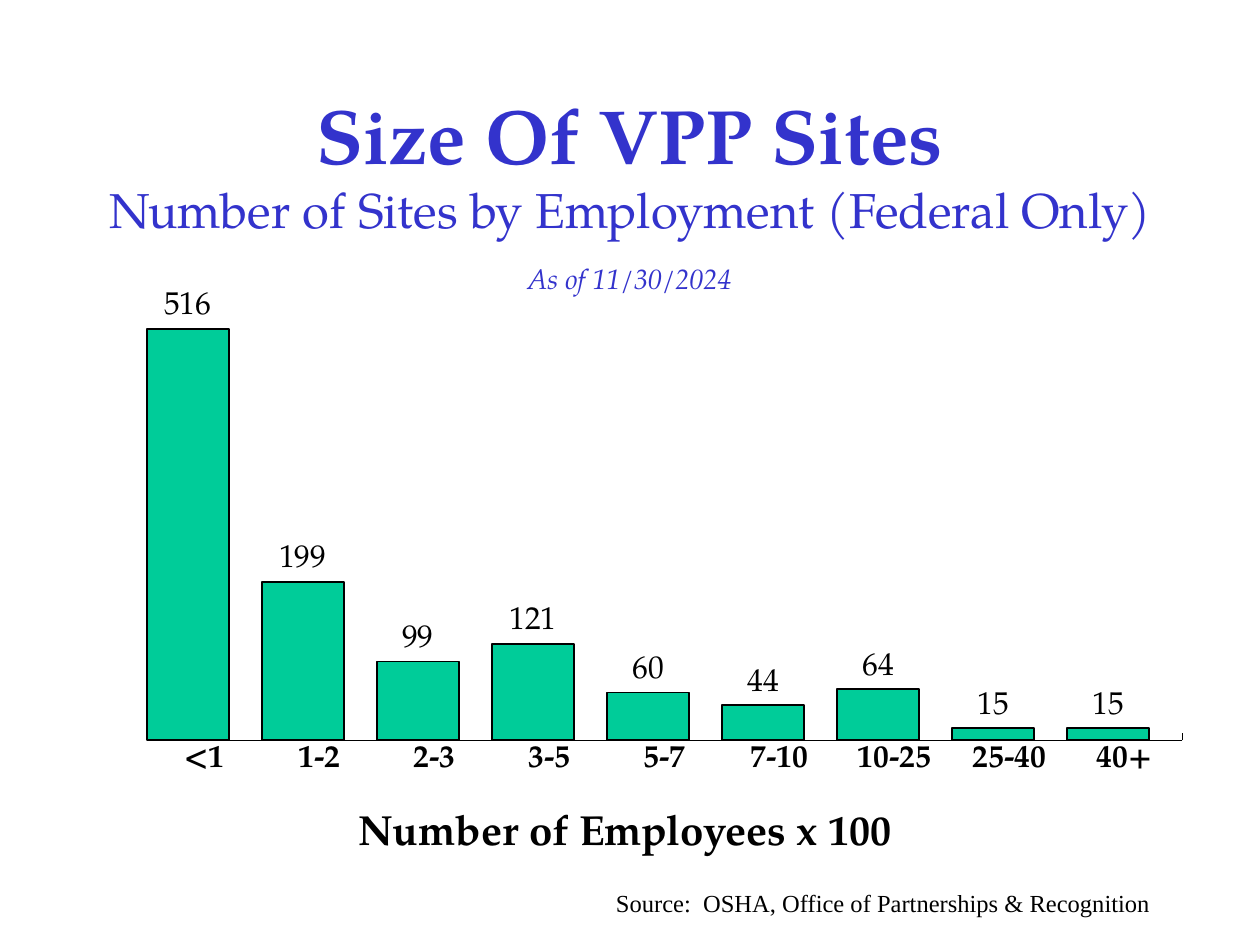
from lxml.etree import SubElement
from pptx import Presentation
from pptx.chart.data import CategoryChartData
from pptx.dml.color import RGBColor
from pptx.enum.chart import XL_CHART_TYPE, XL_LABEL_POSITION, XL_TICK_LABEL_POSITION, XL_TICK_MARK
from pptx.enum.text import MSO_ANCHOR, MSO_AUTO_SIZE, PP_ALIGN
from pptx.oxml.ns import qn
from pptx.util import Inches, Pt

BLACK = RGBColor(0x00, 0x00, 0x00)
BLUE = RGBColor(0x33, 0x33, 0xCC)
GREEN = RGBColor(0x00, 0xCC, 0x99)
PALE = RGBColor(0xCC, 0xCC, 0xFF)
SERIF = "TeX Gyre Pagella"
ROMAN = "Times New Roman"

SIZES = ["<1", "1-2", "2-3", "3-5", "5-7", "7-10", "10-25", "25-40", "40+"]
SITES = [516, 199, 99, 121, 60, 44, 64, 15, 15]
BLANK = [None] * len(SIZES)
SERIES = [("Series 1", SITES, GREEN), ("Series 2", BLANK, BLUE), ("Series 3", BLANK, PALE)]
PLOT = {"x": 0.022, "y": 0, "w": 0.976, "h": 0.881}
TITLE = [("Size Of VPP Sites", 44, True), ("Number of Sites by Employment (Federal Only)", 28, False)]
DATE = "As of 11/30/2024"
AXIS = "Number of Employees x 100"
SOURCE = "Source:  OSHA, Office of Partnerships & Recognition"


def place(box):
    return [Inches(n) for n in box]


def style(font, size, color, name=SERIF, bold=False, italic=False):
    font.size, font.name, font.bold, font.italic = Pt(size), name, bold, italic
    font.color.rgb = color


def add_text(slide, box, text, size, color, wrap=True, **look):
    frame = slide.shapes.add_textbox(*place(box)).text_frame
    frame.word_wrap = wrap
    run = frame.paragraphs[0].add_run()
    run.text = text
    style(run.font, size, color, **look)
    return frame


def add_title(slide):
    title = slide.shapes.title
    title.left, title.top, title.width, title.height = place((0.75, 0.67, 8.5, 1.25))
    frame = title.text_frame
    frame.auto_size = MSO_AUTO_SIZE.NONE
    frame.vertical_anchor = MSO_ANCHOR.MIDDLE
    para = frame.paragraphs[0]
    para.alignment = PP_ALIGN.CENTER
    for row, (text, size, bold) in enumerate(TITLE):
        if row:
            para.add_line_break()
        run = para.add_run()
        run.text = text
        style(run.font, size, BLUE, bold=bold)


def set_plot(chart):
    area = chart._chartSpace.chart.plotArea
    for old in area.findall(qn("c:layout")):
        area.remove(old)
    layout = SubElement(area, qn("c:layout"))
    area.insert(0, layout)
    manual = SubElement(layout, qn("c:manualLayout"))
    rules = [("layoutTarget", "inner"), ("xMode", "edge"), ("yMode", "edge")]
    for tag, value in rules + list(PLOT.items()):
        SubElement(manual, qn(f"c:{tag}")).set("val", str(value))


def add_bars(slide):
    data = CategoryChartData()
    data.categories = SIZES
    for name, values, _ in SERIES:
        data.add_series(name, values)
    box = place((0.98, 2.08, 8.42, 4.31))
    chart = slide.shapes.add_chart(XL_CHART_TYPE.COLUMN_CLUSTERED, *box, data).chart
    chart.has_legend = chart.has_title = False
    style(chart.font, 18, BLACK, bold=True)
    set_plot(chart)

    plot = chart.plots[0]
    plot.gap_width, plot.overlap, plot.vary_by_categories = 0, 80, False
    for series, (_, _, color) in zip(plot.series, SERIES):
        series.format.fill.solid()
        series.format.fill.fore_color.rgb = color
        series.format.line.color.rgb = BLACK
        series.format.line.width = Pt(1)
    labels = plot.series[0].data_labels
    labels.show_value = True
    labels.position = XL_LABEL_POSITION.OUTSIDE_END
    style(labels.font, 18, BLACK)

    base = chart.category_axis
    base.major_tick_mark = XL_TICK_MARK.INSIDE
    base.format.line.color.rgb = BLACK
    base.format.line.width = Pt(0.25)
    side = chart.value_axis
    side.minimum_scale, side.maximum_scale = 0, 600
    side.has_major_gridlines = False
    side.major_tick_mark = XL_TICK_MARK.NONE
    side.tick_label_position = XL_TICK_LABEL_POSITION.NONE
    side.format.line.fill.background()


def main():
    deck = Presentation()
    deck.slide_width, deck.slide_height = Inches(10), Inches(7.5)
    slide = deck.slides.add_slide(deck.slide_layouts[5])
    add_bars(slide)
    add_title(slide)
    date = add_text(slide, (3.58, 1.83, 2.83, 0.75), DATE, 16, BLUE, italic=True)
    date.vertical_anchor = MSO_ANCHOR.MIDDLE
    date.paragraphs[0].alignment = PP_ALIGN.CENTER
    axis = add_text(slide, (2.75, 6.33, 4.6, 0.5), AXIS, 24, BLACK, wrap=False, bold=True)
    source = add_text(slide, (4.79, 7, 5.12, 0.33), SOURCE, 14, BLACK, name=ROMAN)
    for frame in (axis, source):
        frame.auto_size = MSO_AUTO_SIZE.SHAPE_TO_FIT_TEXT
    deck.save("out.pptx")


if __name__ == "__main__":
    main()
